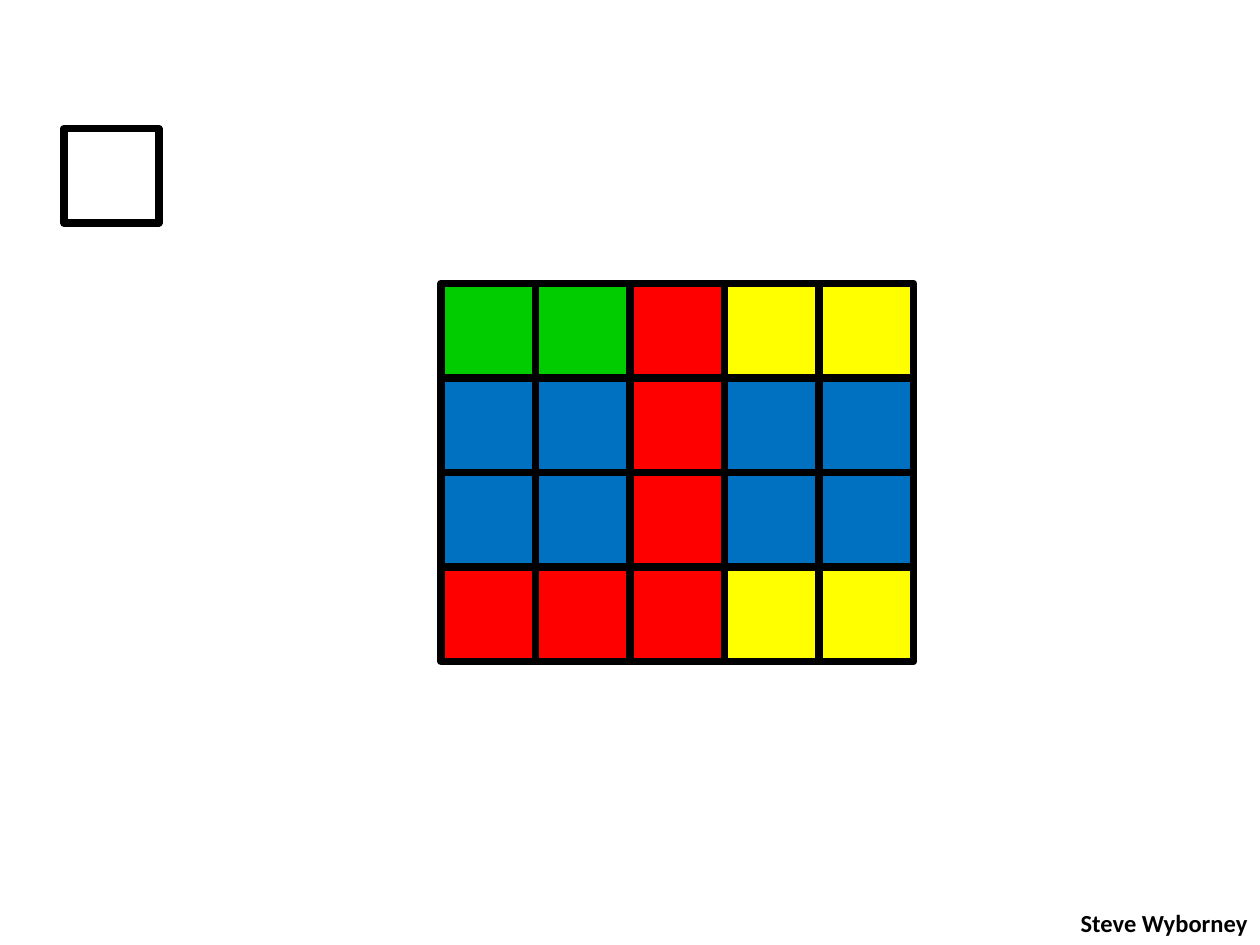
from dataclasses import dataclass
from pptx import Presentation
from pptx.dml.color import RGBColor
from pptx.enum.shapes import MSO_SHAPE
from pptx.enum.text import MSO_ANCHOR, MSO_AUTO_SIZE, PP_ALIGN
from pptx.util import Inches, Pt


@dataclass(frozen=True)
class Theme:
    black: str = "000000"
    white: str = "FFFFFF"
    blue: str = "0070C0"
    yellow: str = "FFFF00"
    green: str = "00CC00"
    red: str = "FF0000"
    font: str = "Calibri"
    size: float = 14
    thin: float = 2
    thick: float = 4.5


THEME = Theme()
WIDTH, HEIGHT = 10, 7.5
UNIT = WIDTH * 0.075
COLS, ROWS = 5, 4

BLOCKS = [
    (0, 1, 2, 2, THEME.blue),
    (3, 0, 2, 1, THEME.yellow),
    (0, 0, 1, 1, THEME.green),
    (0, 3, 3, 1, THEME.red),
    (2, 0, 1, 3, THEME.red),
    (3, 1, 2, 2, THEME.blue),
    (1, 0, 1, 1, THEME.green),
    (3, 3, 2, 1, THEME.yellow),
]


def add_rect(shapes, box, width, fill=None):
    rect = shapes.add_shape(MSO_SHAPE.RECTANGLE, *map(Inches, box))
    rect.shadow.inherit = False
    if fill:
        rect.fill.solid()
        rect.fill.fore_color.rgb = RGBColor.from_string(fill)
    else:
        rect.fill.background()
    rect.line.color.rgb = RGBColor.from_string(THEME.black)
    rect.line.width = Pt(width)


def add_text(shapes, box, text, size=THEME.size, color=THEME.black,
             bold=False, align=PP_ALIGN.LEFT):
    frame = shapes.add_textbox(*map(Inches, box)).text_frame
    frame.word_wrap = False
    frame.auto_size = MSO_AUTO_SIZE.SHAPE_TO_FIT_TEXT
    frame.vertical_anchor = MSO_ANCHOR.TOP
    para = frame.paragraphs[0]
    para.text = text
    para.alignment = align
    para.font.name = THEME.font
    para.font.size = Pt(size)
    para.font.bold = bold
    para.font.color.rgb = RGBColor.from_string(color)


def add_board(shapes, box):
    left, top, width, height = box
    step, rise = width / COLS, height / ROWS

    def place(col, row, wide=1, tall=1):
        return left + col * step, top + row * rise, wide * step, tall * rise

    colors = shapes.add_group_shape().shapes
    for col, row, wide, tall, fill in BLOCKS:
        add_rect(colors, place(col, row, wide, tall), THEME.thin, fill)
    grid = shapes.add_group_shape().shapes
    for row in range(ROWS):
        for col in range(COLS):
            add_rect(grid, place(col, row), THEME.thick)


def add_credit(shapes, box):
    add_text(shapes, box, "Steve Wyborney", bold=True, align=PP_ALIGN.RIGHT)


def main():
    deck = Presentation()
    deck.slide_width, deck.slide_height = Inches(WIDTH), Inches(HEIGHT)
    slide = deck.slides.add_slide(deck.slide_layouts[6])
    slide.background.fill.solid()
    slide.background.fill.fore_color.rgb = RGBColor.from_string(THEME.white)
    shapes = slide.shapes
    add_rect(shapes, (0.51, 1.02, UNIT, UNIT), THEME.thick, THEME.white)
    add_board(shapes, (WIDTH * 0.35, HEIGHT * 0.3, COLS * UNIT, ROWS * UNIT))
    wide, tall = 1.53, 0.34
    add_credit(shapes, (WIDTH - wide, HEIGHT - tall, wide, tall))
    deck.save("out.pptx")


if __name__ == "__main__":
    main()
